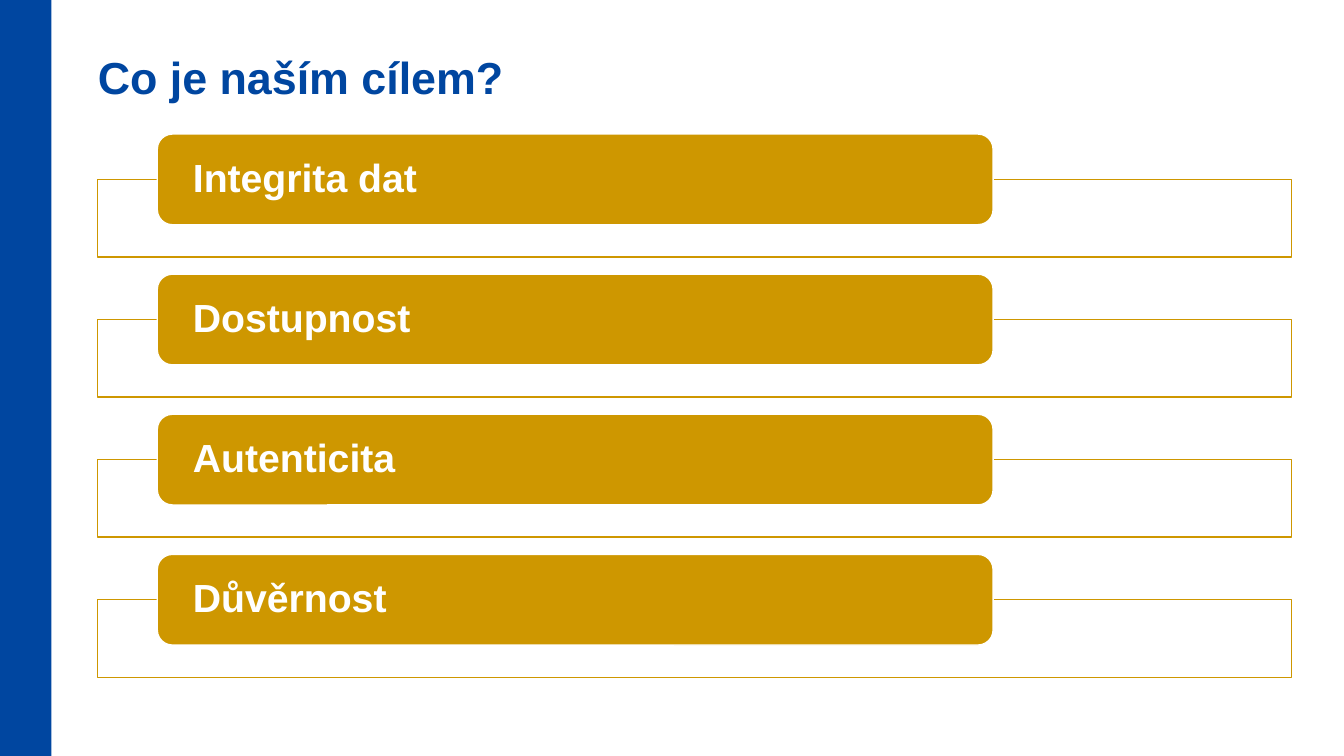
import pptx
import pptx.dml.color
import pptx.enum.shapes
import pptx.enum.text
import pptx.util
from lxml import etree
from pptx.oxml.ns import qn
from pptx.util import Inches

SHAPES = pptx.enum.shapes.MSO_SHAPE
ANCHORS = pptx.enum.text.MSO_ANCHOR
BLUE, GOLD, WHITE = "0046A0", "CE9700", "FFFFFF"


def color(value):
    return pptx.dml.color.RGBColor.from_string(value)


def write(box, text, size=28, fill=WHITE, bold=True, font="Arial",
          inset=0, anchor=ANCHORS.TOP, spacing=1.0):
    frame = box.text_frame
    frame.word_wrap = True
    frame.margin_left = frame.margin_right = Inches(inset)
    frame.margin_top = frame.margin_bottom = 0
    frame.vertical_anchor = anchor
    para = frame.paragraphs[0]
    para.alignment = pptx.enum.text.PP_ALIGN.LEFT
    para.line_spacing = spacing
    span = para.add_run()
    span.text = text
    span.font.name = font
    span.font.size = pptx.util.Pt(size)
    span.font.bold = bold
    span.font.color.rgb = color(fill)


class SlideBuilder:
    def __init__(self, page):
        self.page = page

    def shape(self, kind, left, top, width, height, fill, line=None, opacity=100):
        box = self.page.shapes.add_shape(
            kind, Inches(left), Inches(top), Inches(width), Inches(height))
        box.shadow.inherit = False
        box.fill.solid()
        box.fill.fore_color.rgb = color(fill)
        if opacity < 100:
            tint = box.fill._xPr.find(qn("a:solidFill"))[0]
            etree.SubElement(tint, qn("a:alpha"), val=str(opacity * 1000))
        if line:
            box.line.color.rgb = color(line)
            box.line.width = pptx.util.Pt(1)
        else:
            box.line.fill.background()
        return box

    def title(self, text):
        box = self.page.shapes.add_textbox(
            Inches(0.97), Inches(0.49), Inches(11.84), Inches(0.68))
        write(box, text, size=32, fill=BLUE)

    def goal(self, text, top):
        self.shape(SHAPES.RECTANGLE, 0.97, top + 0.45, 11.84, 0.77,
                   WHITE, line=GOLD, opacity=90)
        label = self.shape(SHAPES.ROUNDED_RECTANGLE, 1.56, top, 8.29, 0.9,
                           GOLD, line=WHITE)
        write(label, text, inset=0.31, anchor=ANCHORS.MIDDLE, spacing=0.9)


def main():
    deck = pptx.Presentation()
    deck.slide_width, deck.slide_height = Inches(13.33), Inches(7.5)
    builder = SlideBuilder(deck.slides.add_slide(deck.slide_layouts[6]))
    builder.shape(SHAPES.RECTANGLE, 0, 0, 0.51, 7.5, BLUE)
    builder.title("Co je naším cílem?")
    goals = ["Integrita dat", "Dostupnost", "Autenticita", "Důvěrnost"]
    for index, goal in enumerate(goals):
        builder.goal(goal, 1.33 + 1.39 * index)
    deck.save("out.pptx")


if __name__ == "__main__":
    main()
